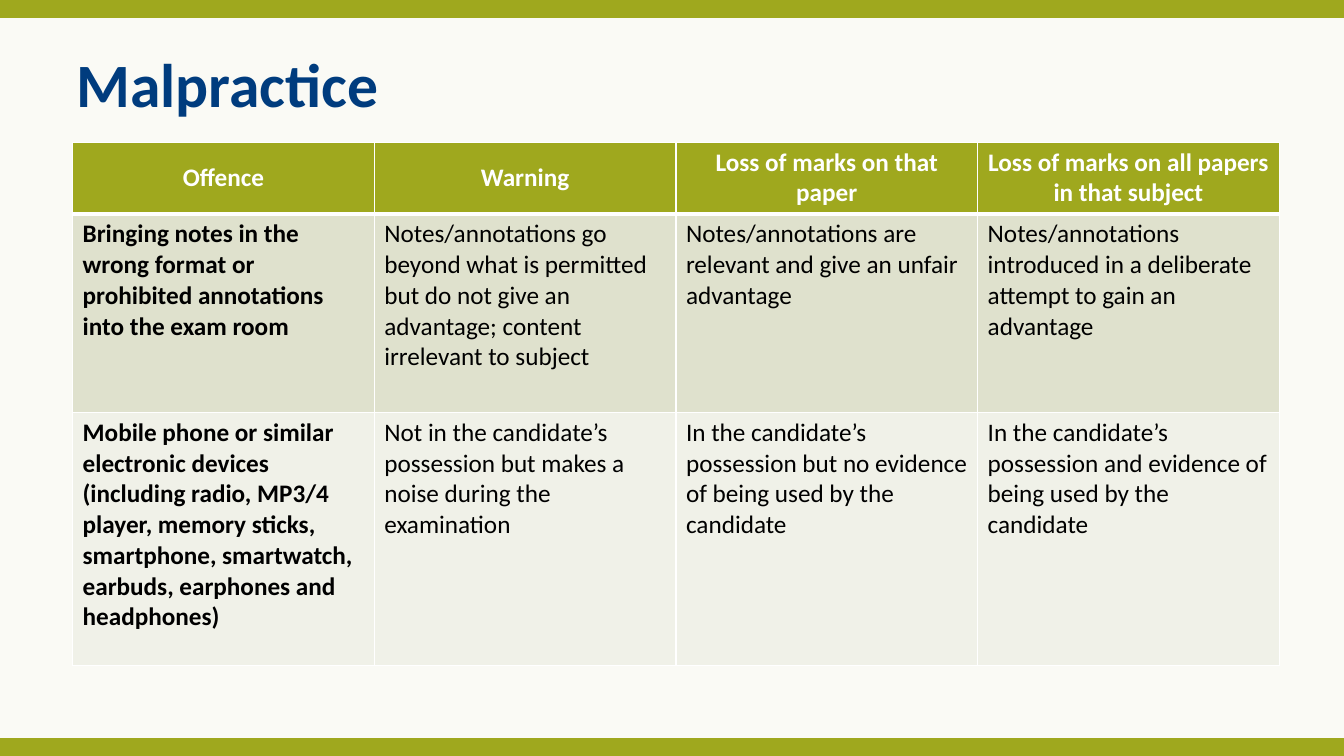
from dataclasses import dataclass

from lxml import etree
from pptx import Presentation
from pptx import util as u
from pptx.dml.color import RGBColor
from pptx.enum import shapes, text
from pptx.oxml.ns import qn

FONT = "Calibri"
OLIVE, NAVY, WHITE, BLACK = "9FA81E", "003C7E", "FFFFFF", "000000"
PAPER, SAGE, PALE = "FAFAF5", "DFE1CD", "F0F1E8"
SLIDE_WIDTH, SLIDE_HEIGHT = 13.33, 7.5
BAND_INSET = 0.09


@dataclass(frozen=True)
class PenaltyRow:
    height: float
    fill: str
    cells: tuple[str, ...]
    is_header: bool = False


PENALTIES = (
    PenaltyRow(0.68, OLIVE, (
        "Offence",
        "Warning",
        "Loss of marks on that paper",
        "Loss of marks on all papers in that subject",
    ), is_header=True),
    PenaltyRow(1.97, SAGE, (
        "Bringing notes in the wrong format or prohibited annotations into the exam room",
        "Notes/annotations go\nbeyond what is permitted but do not give an advantage; "
        "content irrelevant to subject",
        "Notes/annotations are\nrelevant and give an unfair advantage",
        "Notes/annotations\nintroduced in a deliberate attempt to gain an advantage",
    )),
    PenaltyRow(2.51, PALE, (
        "Mobile phone or similar\nelectronic devices\n(including radio, MP3/4\n"
        "player, memory sticks,\nsmartphone, smartwatch,\nearbuds, earphones and\nheadphones)",
        "Not in the candidate’s\npossession but makes a\nnoise during the\nexamination",
        "In the candidate’s\npossession but no evidence of being used by the candidate",
        "In the candidate’s\npossession and evidence of being used by the\ncandidate",
    )),
)


def rgb(hex_colour: str) -> RGBColor:
    return RGBColor.from_string(hex_colour)


def format_paragraphs(frame, size: int, colour: str, bold: bool, **layout) -> None:
    for paragraph in frame.paragraphs:
        for name, value in layout.items():
            setattr(paragraph, name, value)
        for name, value in {"name": FONT, "size": u.Pt(size), "bold": bold}.items():
            setattr(paragraph.font, name, value)
        paragraph.font.color.rgb = rgb(colour)


def add_band(slide, y: float) -> None:
    band = slide.shapes.add_connector(
        shapes.MSO_CONNECTOR.STRAIGHT,
        u.Inches(0), u.Inches(y), u.Inches(SLIDE_WIDTH), u.Inches(y))
    band.line.width = u.Pt(13)
    band.line.color.rgb = rgb(OLIVE)
    etree.SubElement(band._element.spPr, qn("a:effectLst"))


def set_borders(cell, top: int, bottom: int) -> None:
    """Draw white cell borders; top and bottom widths are in points."""
    properties = cell._tc.get_or_add_tcPr()
    widths = {"a:lnL": 1, "a:lnR": 1, "a:lnT": top, "a:lnB": bottom}
    for position, (tag, width) in enumerate(widths.items()):
        border = etree.Element(qn(tag), w=str(u.Pt(width)))
        fill = etree.SubElement(border, qn("a:solidFill"))
        etree.SubElement(fill, qn("a:srgbClr"), val=WHITE)
        properties.insert(position, border)


def add_penalty_table(slide) -> None:
    table = slide.shapes.add_table(
        len(PENALTIES), len(PENALTIES[0].cells),
        u.Inches(0.72), u.Inches(1.41), u.Inches(11.97),
        u.Inches(sum(row.height for row in PENALTIES))).table
    for row_index, row in enumerate(PENALTIES):
        table.rows[row_index].height = u.Inches(row.height)
        for column_index, wording in enumerate(row.cells):
            cell = table.cell(row_index, column_index)
            cell.text = wording
            set_borders(cell, top=3 if row_index == 1 else 1,
                        bottom=3 if row.is_header else 1)
            cell.fill.solid()
            cell.fill.fore_color.rgb = rgb(row.fill)
            cell.vertical_anchor = (
                text.MSO_ANCHOR.MIDDLE if row.is_header else text.MSO_ANCHOR.TOP)
            format_paragraphs(
                cell.text_frame, 18, WHITE if row.is_header else BLACK,
                bold=row.is_header or column_index == 0,
                alignment=text.PP_ALIGN.CENTER if row.is_header else text.PP_ALIGN.LEFT)


def add_title(slide) -> None:
    title = slide.shapes.title
    placement = {"left": 0.66, "top": 0.49, "width": 12.03, "height": 0.92}
    for name, value in placement.items():
        setattr(title, name, u.Inches(value))
    title.text_frame.text = "Malpractice"
    title.text_frame.vertical_anchor = text.MSO_ANCHOR.TOP
    format_paragraphs(title.text_frame, 44, NAVY, bold=True,
                      alignment=text.PP_ALIGN.LEFT, line_spacing=0.9)


def main() -> None:
    deck = Presentation()
    deck.slide_width = u.Inches(SLIDE_WIDTH)
    deck.slide_height = u.Inches(SLIDE_HEIGHT)
    slide = deck.slides.add_slide(deck.slide_layouts.get_by_name("Title Only"))
    slide.background.fill.solid()
    slide.background.fill.fore_color.rgb = rgb(PAPER)
    for y in (SLIDE_HEIGHT - BAND_INSET, BAND_INSET):
        add_band(slide, y)
    add_title(slide)
    add_penalty_table(slide)
    deck.save("out.pptx")


if __name__ == "__main__":
    main()
